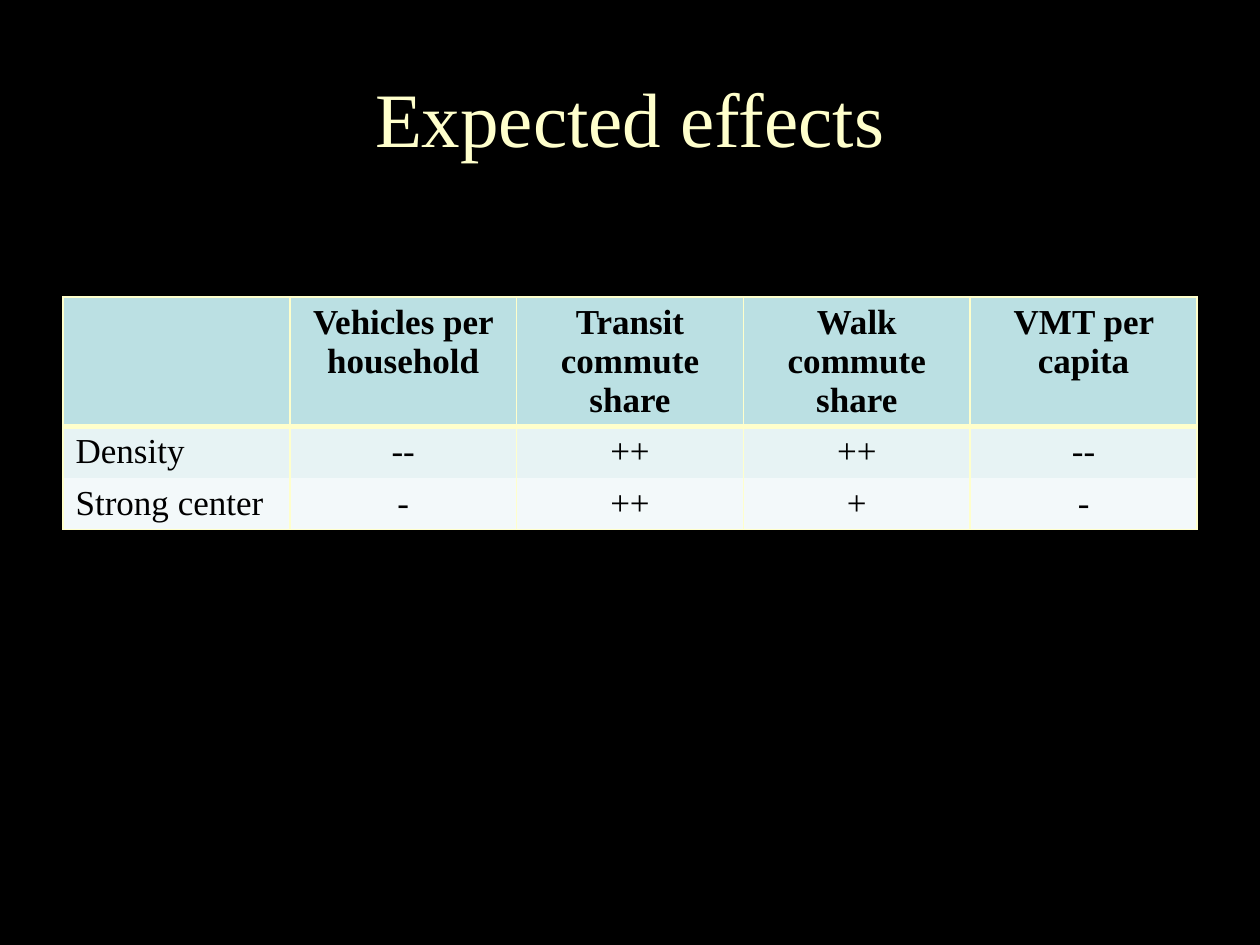
from lxml import etree
from pptx import Presentation
from pptx.dml.color import RGBColor
from pptx.enum.text import MSO_ANCHOR, PP_ALIGN
from pptx.oxml.ns import qn
from pptx.util import Cm, Pt

LEFT, CENTER = PP_ALIGN.LEFT, PP_ALIGN.CENTER
MIDDLE = MSO_ANCHOR.MIDDLE

TITLE = "Expected effects"
ROWS = [
    ("", "Vehicles per household", "Transit commute share",
     "Walk commute share", "VMT per capita"),
    ("Density", "--", "++", "++", "--"),
    ("Strong center", "-", "++", "+", "-"),
]
HEX = {"back": "000000", "ink": "000000", "cream": "FFFFCC"}
FILLS = ["BBE0E3", "E7F3F4", "F3F9FA"]
FONT = "Times New Roman"
SIDE, WIDTH = 1.27, 22.86


def write(frame, text, size=20, color="ink", bold=False, align=CENTER):
    para = frame.paragraphs[0]
    para.alignment = align
    if not text:
        para.font.size = Pt(size)
        return
    run = para.add_run()
    run.text = text
    font = run.font
    font.name, font.size, font.bold = FONT, Pt(size), bold
    font.color.rgb = RGBColor.from_string(HEX[color])


def edge(cell, sides):
    props = cell._tc.get_or_add_tcPr()
    for spot, (side, width) in enumerate(sides):
        line = etree.Element(qn(f"a:ln{side}"), w=str(Pt(width)))
        if width:
            fill = etree.SubElement(line, qn("a:solidFill"))
            etree.SubElement(fill, qn("a:srgbClr"), val=HEX["cream"])
        else:
            etree.SubElement(line, qn("a:noFill"))
        props.insert(spot, line)


def main():
    deck = Presentation()
    deck.slide_width, deck.slide_height = Cm(25.4), Cm(19.05)
    slide = deck.slides.add_slide(deck.slide_layouts[5])
    back = slide.background.fill
    back.solid()
    back.fore_color.rgb = RGBColor.from_string(HEX["back"])

    title = slide.shapes.title
    title.left, title.top = Cm(SIDE), Cm(0.76)
    title.width, title.height = Cm(WIDTH), Cm(3.18)
    title.text_frame.vertical_anchor = MIDDLE
    write(title.text_frame, TITLE, size=44, color="cream")

    count, last = len(ROWS[0]), len(ROWS) - 1
    frame = slide.shapes.add_table(
        len(ROWS), count, Cm(SIDE), Cm(5.99), Cm(WIDTH), Cm(4.6))
    table = frame.table
    for col in table.columns:
        col.width = Cm(WIDTH / count)
    for r, row in enumerate(ROWS):
        table.rows[r].height = Cm(1.04)
        head = r == 0
        top = {0: 1, 1: 3}.get(r, 0)
        base = 3 if head else int(r == last)
        for c, text in enumerate(row):
            cell = table.cell(r, c)
            cell.fill.solid()
            cell.fill.fore_color.rgb = RGBColor.from_string(FILLS[r])
            write(cell.text_frame, text, bold=head,
                  align=CENTER if c else LEFT)
            edge(cell, [("L", 1), ("R", 1), ("T", top), ("B", base)])
    frame.height = Cm(4.6)
    deck.save("out.pptx")


if __name__ == "__main__":
    main()
